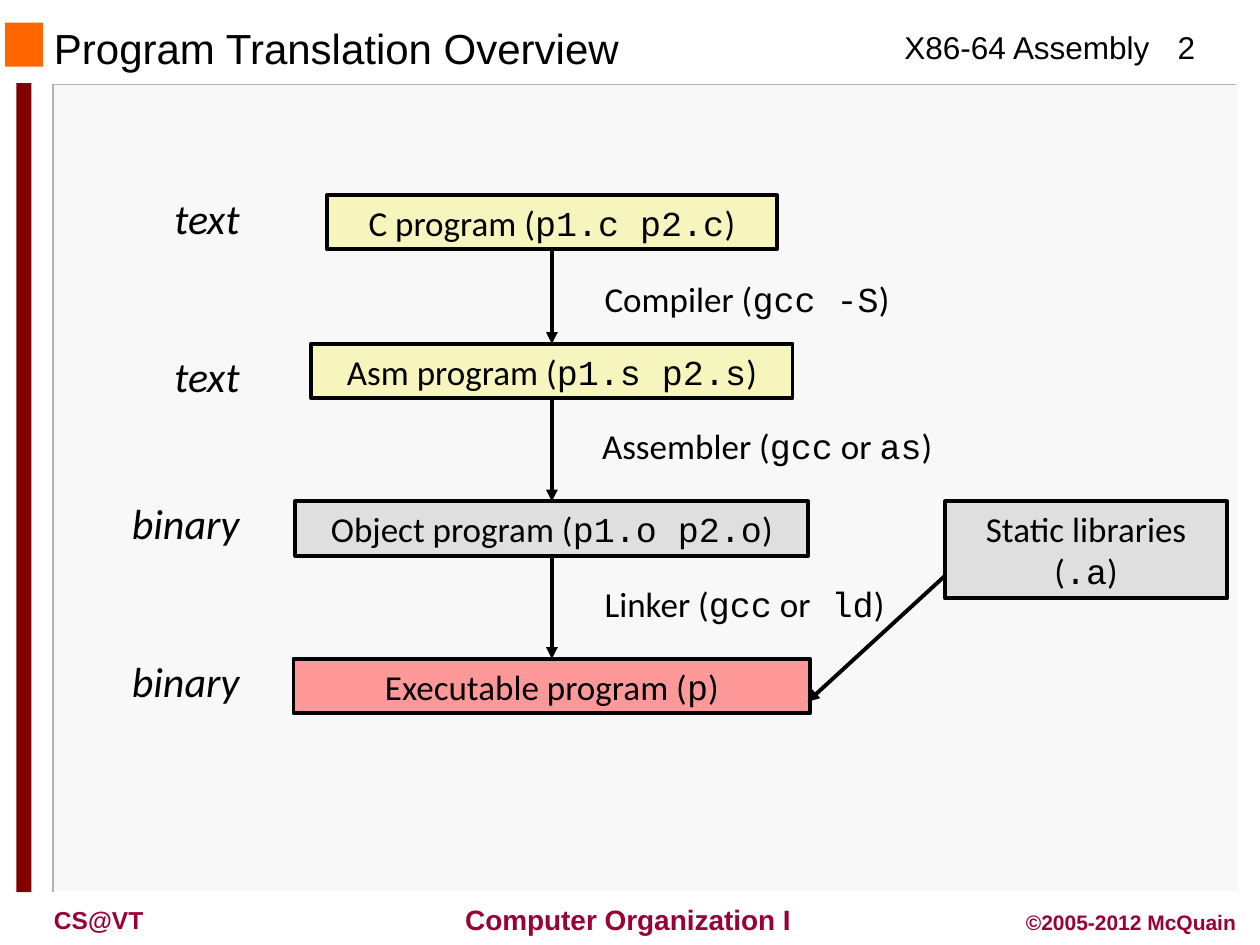
from typing import NamedTuple

import pptx
import pptx.dml.color
import pptx.enum.shapes
import pptx.enum.text
import pptx.oxml
import pptx.oxml.ns
import pptx.util

Inches = pptx.util.Inches
Align = pptx.enum.text.PP_ALIGN
Anchor = pptx.enum.text.MSO_ANCHOR

COLORS = {
    "ink": "000000", "panel": "F8F8F8", "rule": "B2B2B2", "white": "FFFFFF",
    "orange": "FF6600", "maroon": "800000", "footer": "990033",
    "yellow": "F6F5BD", "gray": "DFDFDF", "red": "FF9999",
}
AXIS = 4.38
BOX_H = 0.43


class Style(NamedTuple):
    size: int
    font: str = "Calibri"
    color: str = "ink"
    bold: bool = False
    slant: bool = False
    align: Align = Align.LEFT
    anchor: Anchor = Anchor.TOP
    wrap: bool = True


class Label(NamedTuple):
    text: str
    left: float
    top: float
    width: float
    height: float
    style: Style


class Stage(NamedTuple):
    text: str
    top: float
    width: float
    fill: str


HEAD = Style(18, "Arial", wrap=False)
FOOT = Style(14, "Arial", "footer", bold=True)
KIND = Style(24, slant=True, align=Align.RIGHT)
STEP = Style(20)
BOX = Style(20, align=Align.CENTER)

FRAME = [
    Label("X86-64 Assembly", 7.08, 0.17, 2.17, 0.4, HEAD),
    Label("Computer Organization I", 3.53, 7.11, 2.91, 0.37,
          FOOT._replace(size=16, align=Align.CENTER, anchor=Anchor.MIDDLE, wrap=False)),
    Label("2", 9.08, 0.17, 0.67, 0.4, HEAD._replace(align=Align.CENTER, wrap=True)),
    Label("CS@VT", 0.33, 7.13, 1.5, 0.33, FOOT),
    Label("©2005-2012 McQuain", 7.83, 7.17, 2.08, 0.3,
          FOOT._replace(size=12, align=Align.RIGHT)),
    Label("Program Translation Overview", 0.33, 0.19, 6.33, 0.38,
          Style(24, "Arial", anchor=Anchor.MIDDLE)),
]
KINDS = [
    Label(text, 0.9, top, 1.1, 0.5, KIND)
    for text, top in [("text", 1.48), ("text", 2.73), ("binary", 3.9), ("binary", 5.15)]
]
STEPS = [
    Label("Compiler (`gcc -S`)", 4.7, 2.15, 2.74, BOX_H, STEP),
    Label("Assembler (`gcc` or `as`)", 4.68, 3.32, 3.33, BOX_H, STEP),
    Label("Linker (`gcc` or` ld`)", 4.7, 4.57, 2.89, BOX_H, STEP),
]
STAGES = [
    Stage("C program (`p1.c p2.c`)", 1.55, 3.57, "yellow"),
    Stage("Asm program (`p1.s p2.s`)", 2.73, 3.82, "yellow"),
    Stage("Object program (`p1.o p2.o`)", 3.98, 4.07, "gray"),
    Stage("Executable program (`p`)", 5.23, 4.1, "red"),
]


def tint(name: str) -> pptx.dml.color.RGBColor:
    return pptx.dml.color.RGBColor.from_string(COLORS[name])


def write(shape, text: str, style: Style) -> None:
    """Fill a shape with text; parts between backticks are set in Courier New."""
    frame = shape.text_frame
    frame.word_wrap = style.wrap
    frame.vertical_anchor = style.anchor
    para = frame.paragraphs[0]
    para.alignment = style.align
    for i, part in enumerate(text.split("`")):
        run = para.add_run()
        run.text = part
        font = run.font
        font.name = "Courier New" if i % 2 else style.font
        font.size = pptx.util.Pt(style.size)
        font.bold = style.bold
        font.italic = style.slant
        font.color.rgb = tint(style.color)


def add_label(slide, label: Label) -> None:
    area = map(Inches, (label.left, label.top, label.width, label.height))
    write(slide.shapes.add_textbox(*area), label.text, label.style)


def add_rect(slide, left: float, top: float, width: float, height: float, fill: str):
    rect = slide.shapes.add_shape(
        pptx.enum.shapes.MSO_SHAPE.RECTANGLE,
        Inches(left), Inches(top), Inches(width), Inches(height))
    rect.shadow.inherit = False
    rect.fill.solid()
    rect.fill.fore_color.rgb = tint(fill)
    rect.line.fill.background()
    return rect


def add_box(slide, text: str, left: float, top: float, width: float,
            height: float, fill: str):
    box = add_rect(slide, left, top, width, height, fill)
    box.line.color.rgb = tint("ink")
    box.line.width = pptx.util.Pt(2.25)
    write(box, text, BOX)
    return box


def add_edge(slide, points: list[tuple[float, float]], color: str) -> None:
    """Draw an open thin line through the points."""
    spots = [(Inches(x), Inches(y)) for x, y in points]
    pen = slide.shapes.build_freeform(*spots[0])
    pen.add_line_segments(spots[1:], close=False)
    edge = pen.convert_to_shape()
    edge.shadow.inherit = False
    edge.fill.background()
    edge.line.color.rgb = tint(color)
    edge.line.width = pptx.util.Pt(1)


def add_arrow(slide, x1: float, y1: float, x2: float, y2: float):
    arrow = slide.shapes.add_connector(
        pptx.enum.shapes.MSO_CONNECTOR.STRAIGHT,
        Inches(x1), Inches(y1), Inches(x2), Inches(y2))
    arrow.line.color.rgb = tint("ink")
    arrow.line.width = pptx.util.Pt(2.25)
    space = pptx.oxml.ns.nsdecls("a")
    tail = pptx.oxml.parse_xml(f'<a:tailEnd {space} type="triangle"/>')
    arrow.line._get_or_add_ln().append(tail)
    arrow._element.spPr.append(pptx.oxml.parse_xml(f"<a:effectLst {space}/>"))
    return arrow


def add_flow(slide) -> None:
    """Draw the centred stages and join each one to the next."""
    boxes = [
        add_box(slide, s.text, AXIS - s.width / 2, s.top, s.width, BOX_H, s.fill)
        for s in STAGES
    ]
    for i in range(len(boxes) - 1):
        arrow = add_arrow(slide, AXIS, STAGES[i].top + BOX_H, AXIS, STAGES[i + 1].top)
        arrow.begin_connect(boxes[i], 2)
        arrow.end_connect(boxes[i + 1], 0)


def main() -> None:
    deck = pptx.Presentation()
    deck.slide_width, deck.slide_height = Inches(10), Inches(7.5)
    slide = deck.slides.add_slide(deck.slide_layouts[6])

    add_rect(slide, 0.43, 0.67, 9.4, 6.41, "panel")
    add_edge(slide, [(9.81, 0.67), (0.42, 0.67), (0.42, 7.08)], "rule")
    add_edge(slide, [(9.83, 0.67), (9.83, 7.08), (0.44, 7.08)], "white")
    add_rect(slide, 0.04, 0.18, 0.3, 0.35, "orange")
    add_rect(slide, 0.13, 0.66, 0.12, 6.42, "maroon")

    for label in FRAME + KINDS + STEPS:
        add_label(slide, label)
    add_flow(slide)
    add_box(slide, "Static libraries (`.a`)", 7.5, 3.98, 2.24, 0.77, "gray")
    add_arrow(slide, 7.5, 4.57, 6.41, 5.57)
    deck.save("out.pptx")


if __name__ == "__main__":
    main()
